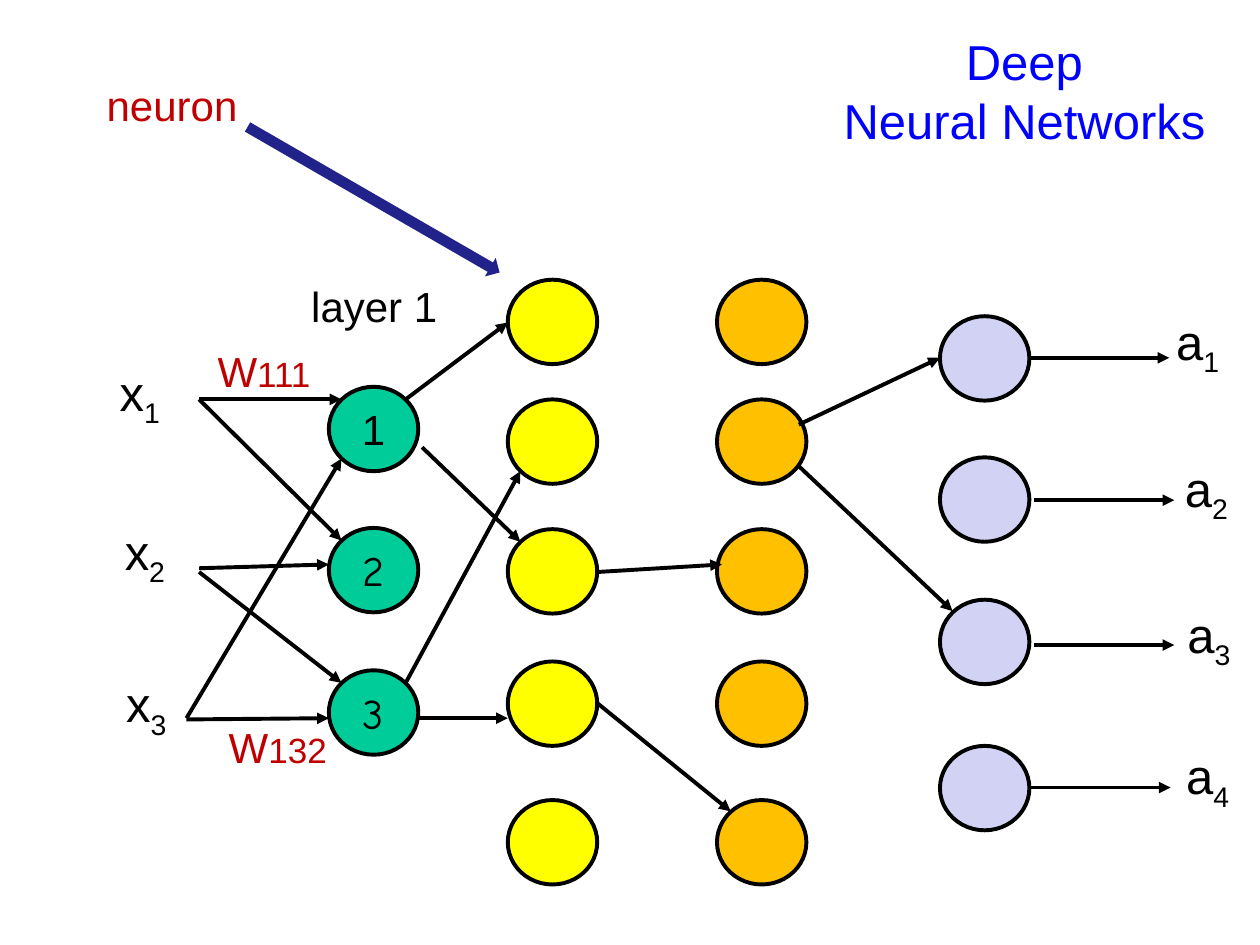
from lxml.etree import SubElement
from pptx import Presentation
from pptx.dml.color import RGBColor
from pptx.enum.shapes import MSO_CONNECTOR, MSO_SHAPE
from pptx.enum.text import MSO_ANCHOR, PP_ALIGN
from pptx.oxml.ns import qn
from pptx.util import Inches, Pt

COLORS = {
    "black": "000000", "title": "0000FF", "red": "C00000", "arrow": "22228B",
    "green": "00CC99", "yellow": "FFFF00", "orange": "FFC000", "lavender": "D2D2F4",
}
NODE_WIDTH, NODE_HEIGHT = 0.71, 0.67
INNER_ROWS = [2.22, 3.17, 4.2, 5.25, 6.35]
LAYERS = [
    (2.61, [3.07, 4.19, 5.32], "green", [("1", "Arial"), ("2", "Comic Neue"), ("3", "Comic Neue")]),
    (4.03, INNER_ROWS, "yellow", []),
    (5.69, INNER_ROWS, "orange", []),
    (7.46, [2.51, 3.63, 4.76, 5.92], "lavender", []),
]
INPUT_LINES = [
    (1.58, 3.17, 2.71, 3.17), (1.58, 3.17, 2.71, 4.29), (1.58, 4.51, 2.61, 4.48),
    (1.58, 4.54, 2.71, 5.42), (1.48, 5.7, 2.71, 3.64), (1.48, 5.71, 2.61, 5.7),
]
HIDDEN_LINES = [
    (3.22, 3.17, 4.03, 2.56), (3.35, 3.55, 4.13, 4.3), (3.3, 5.7, 4.03, 5.7),
    (3.22, 5.42, 4.13, 3.74), (4.74, 4.54, 5.73, 4.48), (4.74, 5.58, 5.8, 6.44),
    (6.34, 3.37, 7.46, 2.84), (6.34, 3.7, 7.56, 4.85),
]
OUTPUT_LINES = [
    (left, top, left + 1.11, top)
    for left, top in [(8.17, 2.84), (8.21, 3.97), (8.21, 5.12), (8.18, 6.25)]
]
VARIABLES = [
    ("x", "1", 0.84, 2.83, 0.54), ("x", "2", 0.88, 4.09, 0.54), ("x", "3", 0.89, 5.3, 0.54),
    ("a", "1", 9.22, 2.42, 0.57), ("a", "2", 9.29, 3.59, 0.57),
    ("a", "3", 9.31, 4.75, 0.57), ("a", "4", 9.3, 5.87, 0.57),
]
LABELS = [
    ((2.35, 2.18, 1.24, 0.5), "black", [("layer 1", 24)]),
    ((1.71, 5.68, 0.99, 0.5), "red", [("W", 24), ("132", 20)]),
    ((1.62, 2.69, 0.95, 0.5), "red", [("W", 24), ("111", 20)]),
    ((0.74, 0.58, 1.25, 0.5), "red", [("neuron", 24)]),
]
TITLE_LINES = ["Deep", "Neural Networks"]


def rgb(name):
    return RGBColor.from_string(COLORS[name])


def add_run(paragraph, text, size, color, font="Arial", baseline=None):
    run = paragraph.add_run()
    run.text = text
    run.font.size, run.font.name = Pt(size), font
    run.font.color.rgb = rgb(color)
    if baseline:
        run._r.get_or_add_rPr().set("baseline", str(baseline))


def add_text_box(slide, box):
    frame = slide.shapes.add_textbox(*map(Inches, box)).text_frame
    frame.word_wrap = False
    frame.paragraphs[0].alignment = PP_ALIGN.CENTER
    return frame


def add_filled_shape(slide, kind, box, color):
    shape = slide.shapes.add_shape(kind, *map(Inches, box))
    shape.shadow.inherit = False
    shape.fill.solid()
    shape.fill.fore_color.rgb = rgb(color)
    return shape


def add_layer(slide, left, tops, color, numbers):
    for index, top in enumerate(tops):
        neuron = add_filled_shape(slide, MSO_SHAPE.OVAL, (left, top, NODE_WIDTH, NODE_HEIGHT), color)
        neuron.line.color.rgb = rgb("black")
        neuron.line.width = Pt(2.25)
        if numbers:
            text, font = numbers[index]
            neuron.text_frame.vertical_anchor = MSO_ANCHOR.MIDDLE
            paragraph = neuron.text_frame.paragraphs[0]
            paragraph.alignment = PP_ALIGN.CENTER
            add_run(paragraph, text, 24, "black", font)


def add_arrow(slide, points):
    connector = slide.shapes.add_connector(MSO_CONNECTOR.STRAIGHT, *map(Inches, points))
    connector.line.color.rgb = rgb("black")
    connector.line.width = Pt(2.25)
    SubElement(connector.line._get_or_add_ln(), qn("a:tailEnd"), type="triangle")
    SubElement(connector._element.spPr, qn("a:effectLst"))


def main():
    """Build the deep neural network diagram slide."""
    presentation = Presentation()
    presentation.slide_width, presentation.slide_height = Inches(10), Inches(7.5)
    slide = presentation.slides.add_slide(presentation.slide_layouts[6])

    title = add_text_box(slide, (6.48, 0.09, 3.3, 1.25))
    title.word_wrap = True
    title.vertical_anchor = MSO_ANCHOR.MIDDLE
    for index, line in enumerate(TITLE_LINES):
        if index:
            title.paragraphs[0].add_line_break()
        add_run(title.paragraphs[0], line, 28, "title")

    for layer in LAYERS:
        add_layer(slide, *layer)
    for points in INPUT_LINES + HIDDEN_LINES + OUTPUT_LINES:
        add_arrow(slide, points)
    for letter, subscript, left, top, width in VARIABLES:
        paragraph = add_text_box(slide, (left, top, width, 0.57)).paragraphs[0]
        add_run(paragraph, letter, 28, "black")
        add_run(paragraph, subscript, 28, "black", baseline=-25000)
    for box, color, runs in LABELS:
        paragraph = add_text_box(slide, box).paragraphs[0]
        for text, size in runs:
            add_run(paragraph, text, size, color)

    pointer = add_filled_shape(slide, MSO_SHAPE.DOWN_ARROW, (2.88, 0.43, 0.17, 2.31), "arrow")
    pointer.line.fill.background()
    pointer.rotation = 300
    presentation.save("out.pptx")


if __name__ == "__main__":
    main()
